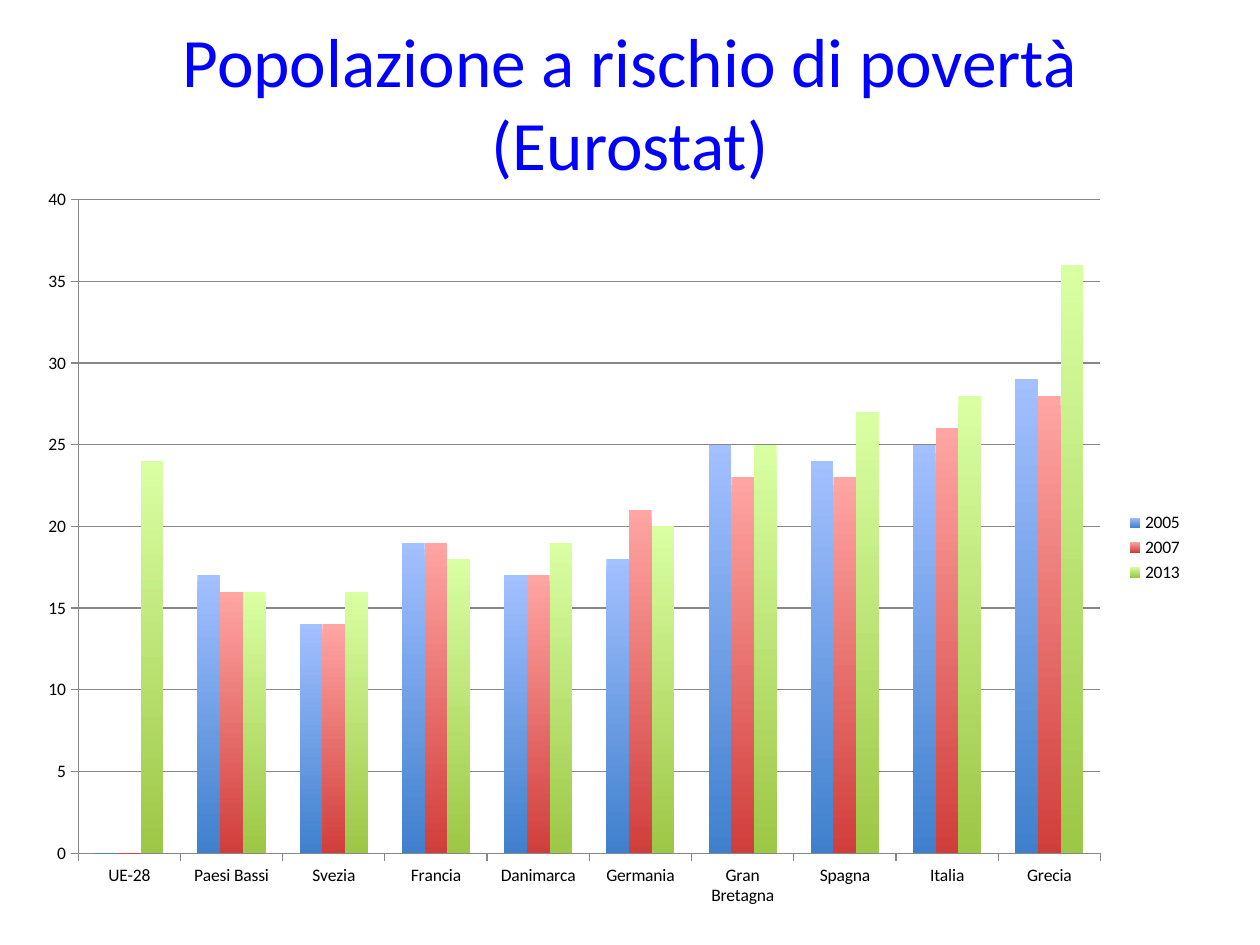
import pptx
import pptx.chart.data
import pptx.dml.color
import pptx.enum.chart
import pptx.enum.text
import pptx.util

PX = 914400 // 126
FONT = "Calibri"
COLORS = {"title": "0000FF", "text": "000000", "line": "878787"}
COUNTRIES = ["UE-28", "Paesi Bassi", "Svezia", "Francia", "Danimarca",
             "Germania", "Gran Bretagna", "Spagna", "Italia", "Grecia"]
RATES = {
    "2005": [0, 17, 14, 19, 17, 18, 25, 24, 25, 29],
    "2007": [0, 16, 14, 19, 17, 21, 23, 23, 26, 28],
    "2013": [24, 16, 16, 18, 19, 20, 25, 27, 28, 36],
}
GRADIENTS = {"2005": ("A3C0FF", "3F80CD"), "2007": ("FFA5A3", "D03E3B"),
             "2013": ("D9FFA3", "9DC746")}


def rgb(value):
    """Turn a hex string into a colour."""
    return pptx.dml.color.RGBColor.from_string(value)


def scaled(box):
    """Turn a box in px into EMU lengths."""
    return [pptx.util.Emu(length * PX) for length in box]


def style_font(font, size, color):
    """Set typeface, size and colour."""
    font.name = FONT
    font.size = pptx.util.Pt(size)
    font.bold = False
    font.color.rgb = rgb(color)


def place_title(page, box, text):
    """Place the centred title in its box."""
    title = page.shapes.title
    title.left, title.top, title.width, title.height = scaled(box)
    frame = title.text_frame
    frame.text = text
    frame.word_wrap = True
    frame.auto_size = pptx.enum.text.MSO_AUTO_SIZE.NONE
    frame.vertical_anchor = pptx.enum.text.MSO_ANCHOR.MIDDLE
    para = frame.paragraphs[0]
    para.alignment = pptx.enum.text.PP_ALIGN.CENTER
    style_font(para.runs[0].font, 39.6, COLORS["title"])


def style_line(line):
    """Give an axis or gridline its thin grey stroke."""
    line.color.rgb = rgb(COLORS["line"])
    line.width = pptx.util.Pt(0.75)


def style_axes(chart):
    """Format both axes and the gridlines."""
    for axis in (chart.category_axis, chart.value_axis):
        axis.major_tick_mark = pptx.enum.chart.XL_TICK_MARK.OUTSIDE
        axis.minor_tick_mark = pptx.enum.chart.XL_TICK_MARK.NONE
        style_line(axis.format.line)
    values = chart.value_axis
    values.minimum_scale, values.maximum_scale, values.major_unit = 0, 40, 5
    values.has_major_gridlines = True
    style_line(values.major_gridlines.format.line)
    values.tick_labels.number_format = "0"
    values.tick_labels.number_format_is_linked = False


def place_chart(page, box):
    """Place the clustered column chart in its box."""
    data = pptx.chart.data.CategoryChartData(number_format="#,##0.0")
    data.categories = COUNTRIES
    for year, rates in RATES.items():
        data.add_series(year, rates)
    kind = pptx.enum.chart.XL_CHART_TYPE.COLUMN_CLUSTERED
    chart = page.shapes.add_chart(kind, *scaled(box), data).chart
    style_font(chart.font, 10, COLORS["text"])
    chart.has_title = False
    chart.has_legend = True
    chart.legend.position = pptx.enum.chart.XL_LEGEND_POSITION.RIGHT
    chart.legend.include_in_layout = False
    plot = chart.plots[0]
    plot.gap_width, plot.overlap, plot.vary_by_categories = 150, 0, False
    for series in plot.series:
        fill = series.format.fill
        fill.gradient()
        fill.gradient_angle = 270
        for stop, color in zip(fill.gradient_stops, GRADIENTS[series.name]):
            stop.color.rgb = rgb(color)
    style_axes(chart)


def main():
    """Build and save the slide."""
    deck = pptx.Presentation()
    deck.slide_width, deck.slide_height = scaled((1260, 945))
    page = deck.slides.add_slide(deck.slide_layouts[5])
    place_title(page, (63, 38, 1134, 127), "Popolazione a rischio di povertà (Eurostat)")
    place_chart(page, (25, 175, 1171, 745))
    deck.save("out.pptx")


if __name__ == "__main__":
    main()
